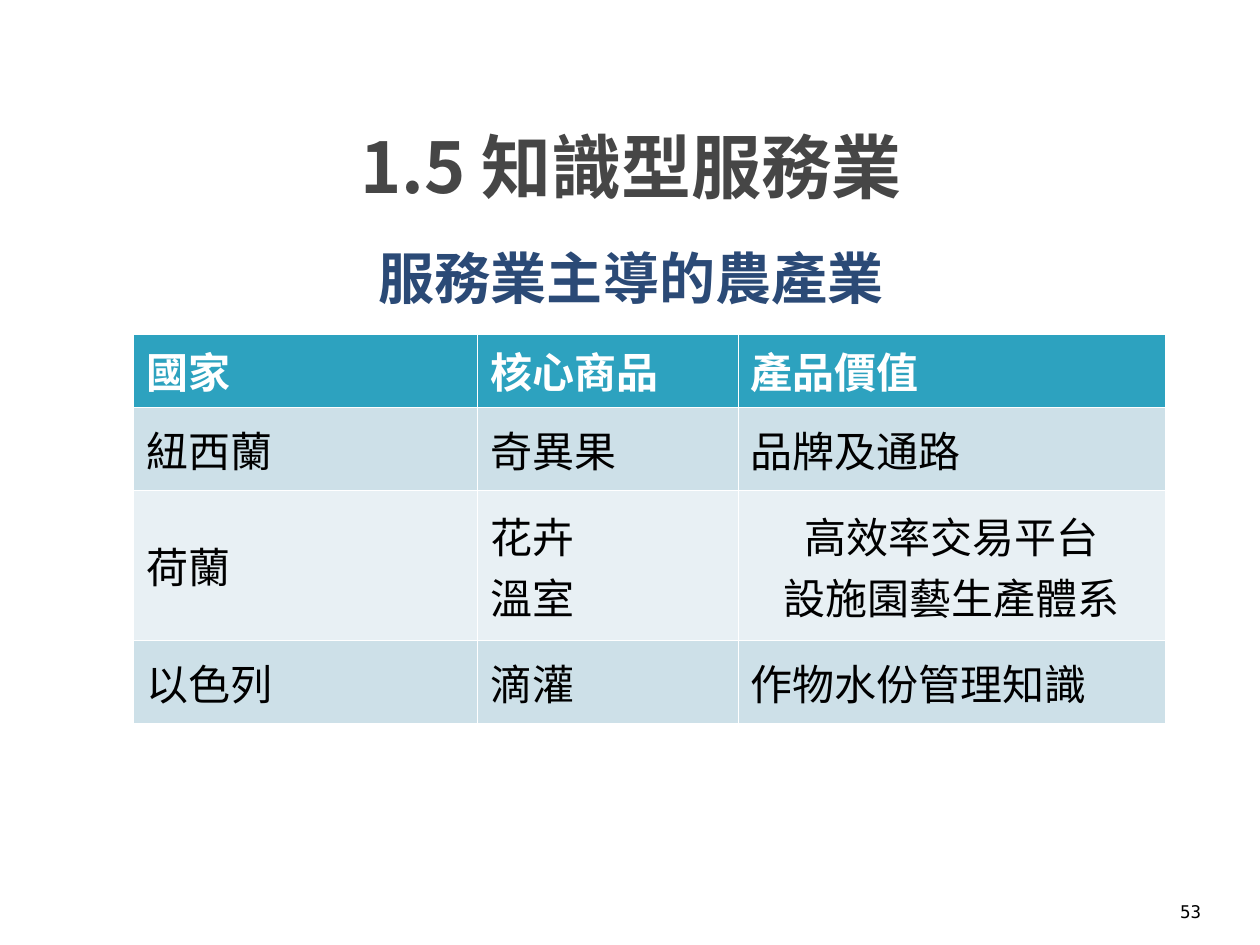
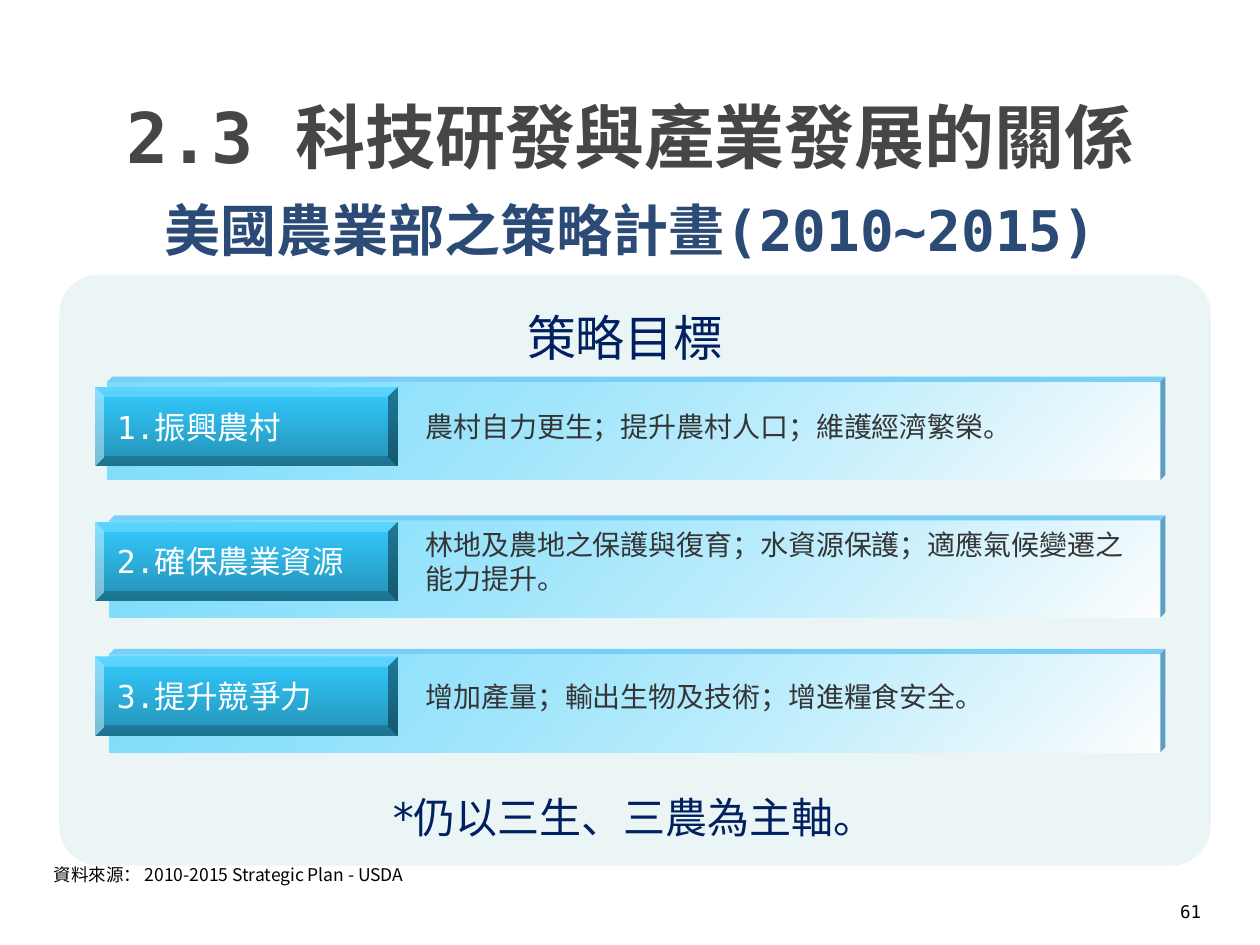
from lxml import etree
from pptx import Presentation
from pptx.dml.color import RGBColor as RGB
from pptx.enum.shapes import MSO_SHAPE as Shape
from pptx.enum.text import MSO_ANCHOR as Anchor, MSO_AUTO_SIZE as Fit, PP_ALIGN as Align
from pptx.oxml.ns import qn
from pptx.util import Inches, Pt

INK = {
    "head": "464646", "title": "2B4A76", "navy": "002060", "text": "353535",
    "black": "000000", "white": "FFFFFF", "teal": "2DA2BF", "odd": "CDE0E8",
    "even": "E8F0F4", "panel": "DAEDEF", "sky": "33CCFF", "deep": "2491B6",
    "top": "7ACFF9", "side": "5C9FC4",
}
MONO, SANS, CJK = "DejaVu Sans Mono", "DejaVu Sans", "Noto Sans CJK SC"
MID, LEFT = Align.CENTER, Align.LEFT


def ink(name):
    return RGB.from_string(INK[name])


def style(run, size, color, face=MONO, bold=False):
    font = run.font
    font.size, font.bold, font.name = Pt(size), bold, face
    font.color.rgb = ink(color)
    east = etree.SubElement(run._r.get_or_add_rPr(), qn("a:ea"))
    east.set("typeface", CJK)


def write(frame, text, size, color, align=LEFT, face=MONO, bold=False,
          anchor=Anchor.MIDDLE, wrap=True):
    frame.text = text
    frame.word_wrap, frame.vertical_anchor = wrap, anchor
    frame.auto_size = Fit.NONE
    for para in frame.paragraphs:
        para.alignment = align
        for run in para.runs:
            style(run, size, color, face, bold)


def move(shape, box):
    shape.left, shape.top, shape.width, shape.height = map(Inches, box)


def label(slide, box, *args, **opts):
    note = slide.shapes.add_textbox(*map(Inches, box))
    write(note.text_frame, *args, **opts)
    return note


def plain(shape):
    shape.shadow.inherit = False
    shape.line.fill.background()


def block(slide, kind, box):
    shape = slide.shapes.add_shape(kind, *map(Inches, box))
    plain(shape)
    return shape


def fade(shape, alphas):
    for node, alpha in zip(shape._element.spPr.iter(qn("a:srgbClr")), alphas):
        etree.SubElement(node, qn("a:alpha")).set("val", str(alpha * 1000))


def blend(shape, first, last, angle):
    fill = shape.fill
    fill.gradient()
    fill.gradient_angle = angle
    for stop, name, spot in zip(fill.gradient_stops, (first, last), (0, 1)):
        stop.color.rgb = ink(name)
        stop.position = spot


def frame(slide, head, box, face, title, spot, page):
    move(slide.shapes.title, spot)
    write(slide.shapes.title.text_frame, title, 32, "title", MID, bold=True)
    label(slide, box, head, 40, "head", MID, face=face, bold=True)
    label(slide, (9.18, 7.09, 0.54, 0.29), page, 10, "black", MID)


def grid(slide, box, rows, widths, heights):
    table = slide.shapes.add_table(len(rows), len(widths), *map(Inches, box)).table
    for col, width in zip(table.columns, widths):
        col.width = Inches(width)
    for i, (row, height) in enumerate(zip(rows, heights)):
        table.rows[i].height = Inches(height)
        fill = "teal" if i == 0 else "odd" if i % 2 else "even"
        for j, text in enumerate(row):
            cell = table.cell(i, j)
            cell.fill.solid()
            cell.fill.fore_color.rgb = ink(fill)
            cell.vertical_anchor = Anchor.MIDDLE
            cell.text = text
            for para in cell.text_frame.paragraphs:
                para.alignment = MID if (i, j) == (2, 2) else LEFT
                for run in para.runs:
                    style(run, 24, "black" if i else "white", bold=i == 0)


def facet(slide, points, color):
    first, *rest = [(Inches(x), Inches(y)) for x, y in points]
    pen = slide.shapes.build_freeform(*first)
    pen.add_line_segments(rest)
    shape = pen.convert_to_shape()
    plain(shape)
    shape.fill.solid()
    shape.fill.fore_color.rgb = ink(color)


def bar(slide, box, depth=0.04):
    x, y, w, h = box
    end, low = x + w, y + h
    face = block(slide, Shape.RECTANGLE, box)
    blend(face, "sky", "white", 315)
    fade(face, (60, 90))
    lip = (end + depth, y - depth)
    facet(slide, [(x, y), (x + depth, y - depth), lip, (end, y)], "top")
    facet(slide, [(end, y), lip, (end + depth, low - depth), (end, low)], "side")


def goal(slide, box, name, text, strip):
    x, y, w, h = box
    bar(slide, strip)
    tag = block(slide, Shape.BEVEL, (x, y, 2.41, h))
    blend(tag, "sky", "deep", 270)
    write(tag.text_frame, name, 18, "white", wrap=False)
    label(slide, (x + 2.53, y - 0.01, w - 2.53, h + 0.02), text, 16, "text")


def panel(slide, box, goals):
    x, y, w, h = box
    back = block(slide, Shape.ROUNDED_RECTANGLE, box)
    back.adjustments[0] = 0.067
    back.fill.solid()
    back.fill.fore_color.rgb = ink("panel")
    fade(back, (52,))
    label(slide, (x + 2.89, y + 0.21, 3.2, 0.57), "策略目標", 28, "navy", MID,
          anchor=Anchor.TOP)
    for i, (name, text, left, top, high) in enumerate(goals):
        goal(slide, (x + 0.28, y + 0.89 + 1.07 * i, 8.46, 0.63), name, text,
             (x + left, y + top, 8.74 - left, high))


def motto(body, box):
    move(body, box)
    write(body.text_frame, "*仍以三生、三農為主軸。", 24, "navy", MID, face=SANS,
          anchor=Anchor.TOP)
    para = body.text_frame.paragraphs[0]
    para.space_before = Pt(0)
    props = para._p.get_or_add_pPr()
    props.set("marL", str(Inches(0.56)))
    props.set("indent", str(Inches(-0.56)))
    etree.SubElement(props, qn("a:buNone"))


def source(slide, box):
    note = label(slide, box, "資料來源", 10, "black", anchor=Anchor.TOP)
    run = note.text_frame.paragraphs[0].add_run()
    run.text = "： 2010-2015 Strategic Plan - USDA"
    style(run, 10, "black", CJK)


def farms(deck):
    slide = deck.slides.add_slide(deck.slide_layouts[5])
    rows = [
        ("國家", "核心商品", "產品價值"),
        ("紐西蘭", "奇異果", "品牌及通路"),
        ("荷蘭", "花卉\n溫室", "高效率交易平台\n設施園藝生產體系"),
        ("以色列", "滴灌", "作物水份管理知識"),
    ]
    grid(slide, (1.06, 2.65, 8.19, 3.07), rows, (2.73, 2.07, 3.39),
         (0.56, 0.66, 1.19, 0.66))
    frame(slide, "1.5 知識型服務業", (0.28, 0.61, 9.45, 1.41), CJK,
          "服務業主導的農產業", (0.75, 1.7, 8.52, 1), "53")


def plan(deck):
    slide = deck.slides.add_slide(deck.slide_layouts[1])
    goals = [
        ("1.振興農村", "農村自力更生；提升農村人口；維護經濟繁榮。", 0.38, 0.85, 0.78),
        ("2.確保農業資源",
         "林地及農地之保護與復育；水資源保護；適應氣候變遷之能力提升。", 0.4, 1.95, 0.77),
        ("3.提升競爭力", "增加產量；輸出生物及技術；增進糧食安全。", 0.4, 3.01, 0.78),
    ]
    body = slide.placeholders[1]
    panel(slide, (0.47, 2.18, 9.14, 4.69), goals)
    motto(body, (2.73, 6.23, 4.61, 0.55))
    slide.shapes._spTree.append(body._element)
    source(slide, (0.33, 6.81, 5.67, 0.27))
    frame(slide, "2.3 科技研發與產業發展的關係", (0.28, 0.52, 9.45, 1.11), MONO,
          "美國農業部之策略計畫(2010~2015)", (0.28, 1.38, 9.45, 0.87), "61")


def main():
    deck = Presentation()
    deck.slide_width, deck.slide_height = Inches(10), Inches(7.5)
    farms(deck)
    plan(deck)
    deck.save("out.pptx")


if __name__ == "__main__":
    main()
